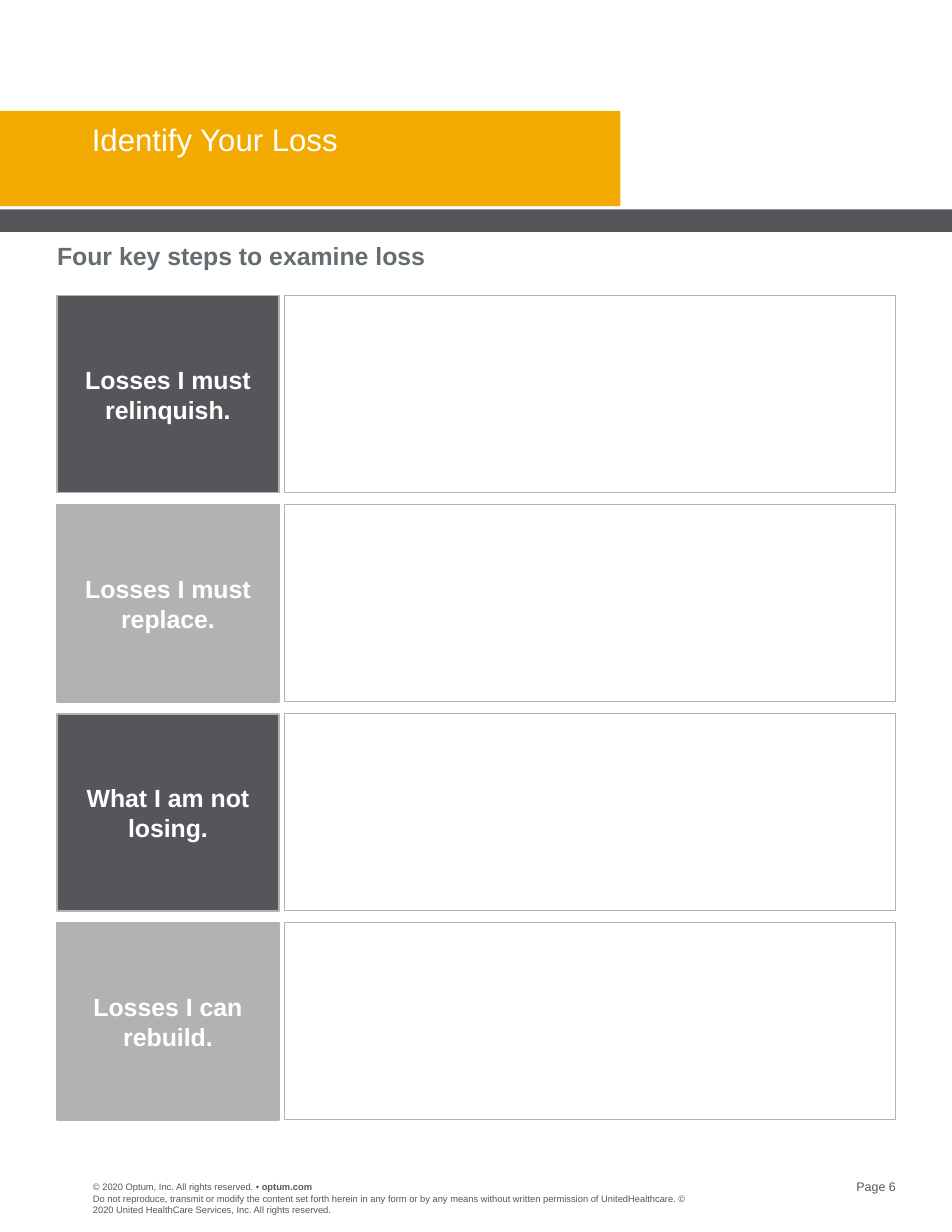
from pptx import Presentation
from pptx.dml.color import RGBColor
from pptx.enum.shapes import MSO_SHAPE as Shape
from pptx.enum.text import MSO_ANCHOR as Anchor, MSO_AUTO_SIZE as AutoSize, PP_ALIGN as Align
from pptx.util import Inches, Pt

AMBER, CHARCOAL, SILVER, SLATE, WHITE = "F2AA00", "55565A", "B1B3B3", "646D72", "FFFFFF"


def color(value):
    return RGBColor.from_string(value)


class Worksheet:
    """Holds the style and the current slide."""

    font = "Arial"

    def __init__(self, slide):
        self.slide = slide

    def fill_frame(self, frame, runs, size, ink, align=Align.LEFT, anchor=Anchor.TOP):
        """Fill a frame with one paragraph of (text, bold) runs."""
        frame.margin_left = frame.margin_right = frame.margin_top = frame.margin_bottom = 0
        frame.word_wrap = True
        frame.auto_size = AutoSize.NONE
        frame.vertical_anchor = anchor
        paragraph = frame.paragraphs[0]
        paragraph.alignment = align
        for text, bold in runs:
            run = paragraph.add_run()
            run.text = text
            run.font.name = self.font
            run.font.size = Pt(size)
            run.font.bold = bold
            run.font.color.rgb = color(ink)
        return paragraph

    def title(self, text, left, top, width, height):
        heading = self.slide.shapes.title
        heading.left, heading.top = Inches(left), Inches(top)
        heading.width, heading.height = Inches(width), Inches(height)
        self.fill_frame(heading.text_frame, [(text, False)], 20, WHITE).line_spacing = 0.9
        # The title has to lie in front of the band behind it.
        self.slide.shapes.element.append(heading.element)

    def text(self, runs, left, top, width, height, size, ink=CHARCOAL, align=Align.LEFT):
        box = self.slide.shapes.add_textbox(
            Inches(left), Inches(top), Inches(width), Inches(height))
        self.fill_frame(box.text_frame, runs, size, ink, align)

    def box(self, left, top, width, height, fill=None, border=None, label=None):
        """Add a rectangle; border is the line width in points."""
        box = self.slide.shapes.add_shape(
            Shape.RECTANGLE, Inches(left), Inches(top), Inches(width), Inches(height))
        box.shadow.inherit = False
        if fill:
            box.fill.solid()
            box.fill.fore_color.rgb = color(fill)
        else:
            box.fill.background()
        if border:
            box.line.color.rgb = color(SILVER)
            box.line.width = Pt(border)
        else:
            box.line.fill.background()
        if label:
            self.fill_frame(box.text_frame, [(label, True)], 16, WHITE,
                            Align.CENTER, Anchor.MIDDLE)


def main():
    deck = Presentation()
    deck.slide_width, deck.slide_height = Inches(8.5), Inches(11)
    sheet = Worksheet(deck.slides.add_slide(deck.slide_layouts[5]))

    sheet.box(0, 0.99, 5.54, 0.85, AMBER)
    sheet.box(0, 1.87, 8.5, 0.2, CHARCOAL)
    sheet.title("Identify Your Loss", 0.82, 1.11, 4.5, 0.61)
    sheet.text([("Four key steps to examine loss", True)], 0.51, 2.15, 6.6, 0.27, 16, SLATE)

    steps = ["Losses I must relinquish.", "Losses I must replace.",
             "What I am not losing.", "Losses I can rebuild."]
    first_top, last_top, row_height = 2.64, 8.24, 1.76
    pitch = (last_top - first_top) / (len(steps) - 1)
    for row, step in enumerate(steps):
        top = first_top + row * pitch
        sheet.box(2.54, top, 5.46, row_height, border=0.75)
        sheet.box(0.51, top, 1.98, row_height, (CHARCOAL, SILVER)[row % 2], 1, step)

    sheet.text([("© 2020 Optum, Inc. All rights reserved. • ", False), ("optum.com", True)],
               0.83, 10.55, 2, 0.1, 6)
    sheet.text([("Do not reproduce, transmit or modify the content set forth herein in any form "
                 "or by any means without written permission of UnitedHealthcare. "
                 "© 2020 United HealthCare Services, Inc. All rights reserved.", False)],
               0.83, 10.65, 5.3, 0.2, 6)
    sheet.text([("Page 6", False)], 7.19, 10.53, 0.81, 0.13, 8, align=Align.RIGHT)

    deck.save("out.pptx")


if __name__ == "__main__":
    main()
